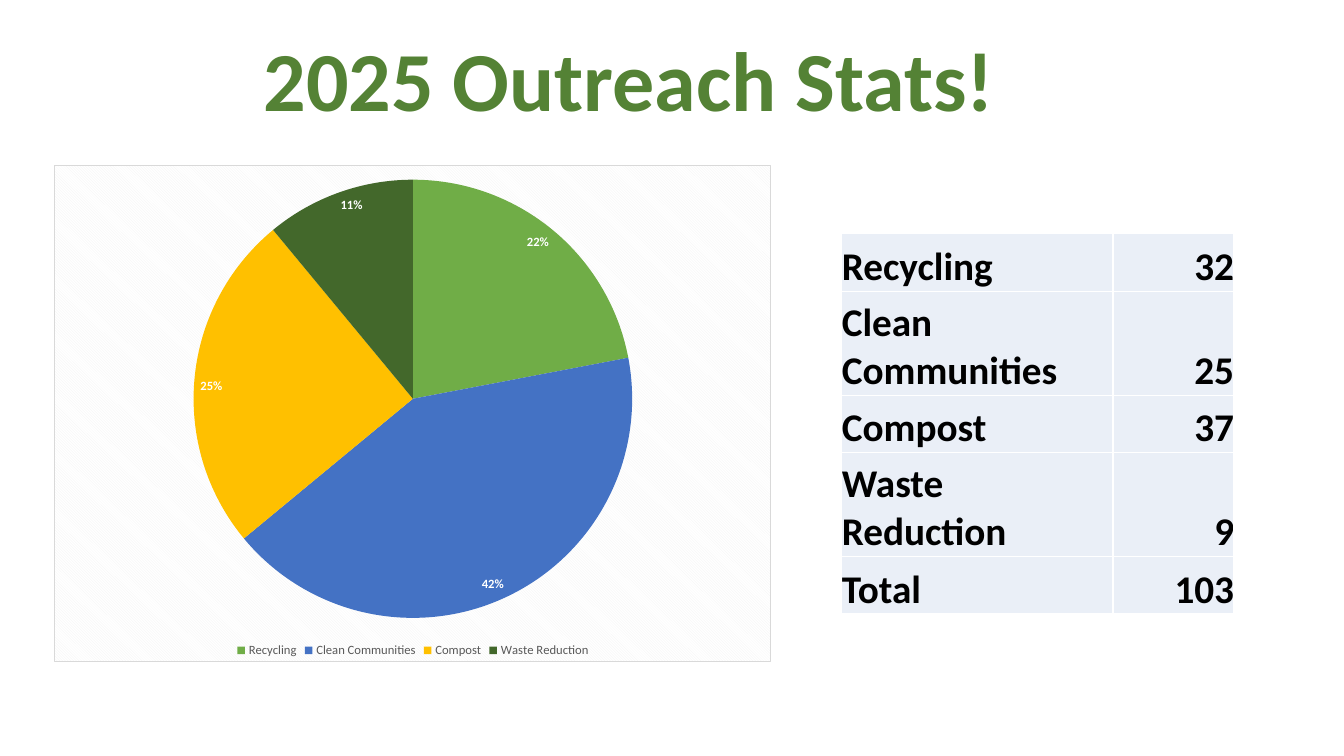
from lxml.etree import SubElement
from pptx import Presentation
from pptx.chart.data import CategoryChartData
from pptx.dml.color import RGBColor
from pptx.enum.chart import (XL_CHART_TYPE as ChartType, XL_LABEL_POSITION as LabelPos,
                             XL_LEGEND_POSITION as LegendPos)
from pptx.enum.text import MSO_ANCHOR as Anchor, MSO_AUTO_SIZE as AutoSize, PP_ALIGN as Align
from pptx.oxml import parse_xml
from pptx.oxml.ns import nsdecls, qn
from pptx.util import Emu, Pt

PX = 9144  # EMU in one px, 100 px to the inch
FONT = "Calibri"
BLACK = RGBColor(0x00, 0x00, 0x00)
WHITE = RGBColor(0xFF, 0xFF, 0xFF)
GREY = RGBColor(0x59, 0x59, 0x59)
FRAME = RGBColor(0xD9, 0xD9, 0xD9)
STRIPE = RGBColor(0xF2, 0xF2, 0xF2)
TITLE_GREEN = RGBColor(0x54, 0x82, 0x35)
CELL_BLUE = RGBColor(0xEA, 0xEF, 0xF7)
SLICES = [RGBColor(0x70, 0xAD, 0x47), RGBColor(0x44, 0x72, 0xC4),
          RGBColor(0xFF, 0xC0, 0x00), RGBColor(0x43, 0x68, 0x2B)]

TOPICS = ["Recycling", "Clean Communities", "Compost", "Waste Reduction"]
SHARES = [22, 42, 25, 11]
COUNTS = [32, 25, 37, 9]


def px(*lengths):
    return [Emu(length * PX) for length in lengths]


def style_font(font, size, color, bold=False):
    font.name, font.size, font.bold = FONT, Pt(size), bold
    font.color.rgb = color


def write(frame, text, size=28, color=BLACK, bold=True, align=Align.LEFT):
    paragraph = frame.paragraphs[0]
    paragraph.alignment = align
    run = paragraph.add_run()
    run.text = text
    style_font(run.font, size, color, bold)


class StatsSlide:
    def __init__(self, deck):
        self.slide = deck.slides.add_slide(deck.slide_layouts[5])

    def title(self, text, box):
        heading = self.slide.shapes.title
        heading.left, heading.top, heading.width, heading.height = px(*box)
        frame = heading.text_frame
        frame.word_wrap = False
        frame.auto_size = AutoSize.SHAPE_TO_FIT_TEXT
        write(frame, text, size=60, color=TITLE_GREEN, align=Align.CENTER)

    def pie(self, topics, shares, colors, box):
        data = CategoryChartData()
        data.categories = topics
        data.add_series("Series 1", shares)
        chart = self.slide.shapes.add_chart(ChartType.PIE, *px(*box), data).chart
        chart.has_title = False
        style_font(chart.font, 10, BLACK)
        chart.has_legend = True
        chart.legend.position = LegendPos.BOTTOM
        chart.legend.include_in_layout = False
        style_font(chart.legend.font, 9, GREY)

        # Slices and their percentages
        chart.plots[0].vary_by_categories = True
        series = chart.plots[0].series[0]
        for index, color in enumerate(colors):
            fill = series.points[index].format.fill
            fill.solid()
            fill.fore_color.rgb = color
        labels = series.data_labels
        labels.show_percentage, labels.show_value = True, False
        labels.number_format, labels.number_format_is_linked = "0%", False
        labels.position = LabelPos.INSIDE_END
        style_font(labels.font, 9, WHITE, bold=True)

        # Striped background and thin frame
        chart.element.find(qn("c:chart")).addnext(parse_xml(
            f'<c:spPr {nsdecls("c", "a")}><a:pattFill prst="dkDnDiag">'
            f'<a:fgClr><a:srgbClr val="{STRIPE}"/></a:fgClr>'
            f'<a:bgClr><a:srgbClr val="{WHITE}"/></a:bgClr></a:pattFill>'
            f'<a:ln w="{Pt(0.75)}"><a:solidFill><a:srgbClr val="{FRAME}"/></a:solidFill></a:ln>'
            '</c:spPr>'))

    def table(self, rows, widths, heights, corner):
        size = (sum(widths), sum(heights))
        grid = self.slide.shapes.add_table(len(rows), len(widths), *px(*corner, *size)).table
        for column, width in zip(grid.columns, px(*widths)):
            column.width = width
        for row, height, texts in zip(grid.rows, px(*heights), rows):
            row.height = height
            for cell, text, align in zip(row.cells, texts, (Align.LEFT, Align.RIGHT)):
                self.cell(cell, text, align)

    def cell(self, cell, text, align):
        cell.margin_left = cell.margin_right = cell.margin_top = cell.margin_bottom = 0
        cell.vertical_anchor = Anchor.BOTTOM
        properties = cell._tc.get_or_add_tcPr()
        for side in ("a:lnL", "a:lnR", "a:lnT", "a:lnB"):
            border = SubElement(properties, qn(side), w=str(Pt(1)))
            SubElement(SubElement(border, qn("a:solidFill")), qn("a:srgbClr"), val=str(WHITE))
        cell.fill.solid()
        cell.fill.fore_color.rgb = CELL_BLUE
        write(cell.text_frame, text, align=align)


def main():
    deck = Presentation()
    deck.slide_width, deck.slide_height = px(1333, 750)
    stats = StatsSlide(deck)

    # Share of each topic
    stats.pie(TOPICS, SHARES, SLICES, (54, 164, 711, 493))

    # Counts with their total; two-word topics take two lines
    rows = [(topic, str(count)) for topic, count in zip(TOPICS, COUNTS)]
    rows.append(("Total", str(sum(COUNTS))))
    heights = [103 if " " in topic else 57 for topic, _ in rows]
    stats.table(rows, (269, 120), heights, (835, 232))

    # Heading
    stats.title("2025 Outreach Stats!", (248, 22, 752, 111))
    deck.save("out.pptx")


if __name__ == "__main__":
    main()
